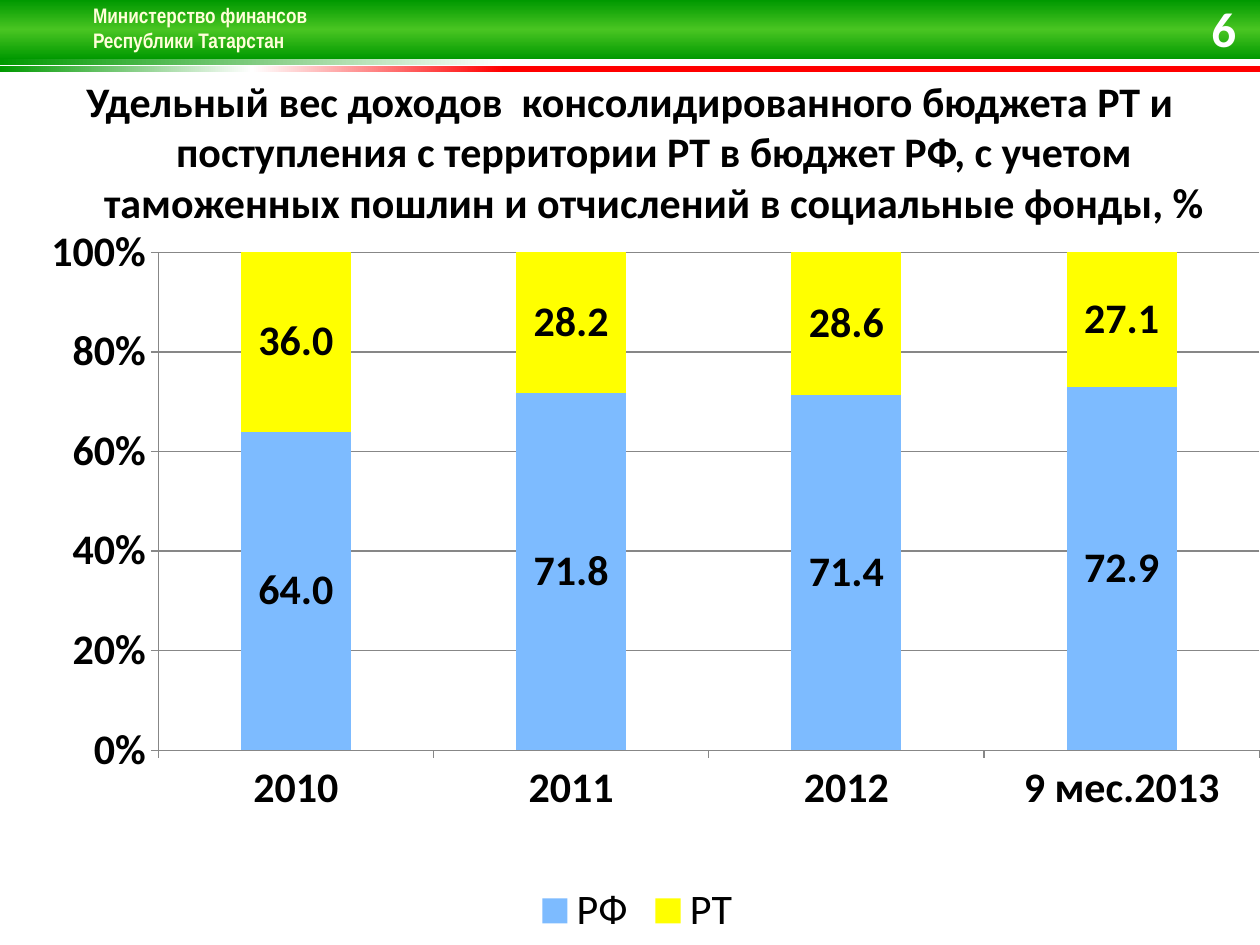
from lxml.etree import SubElement
from pptx import Presentation
from pptx.chart.data import CategoryChartData
from pptx.dml.color import RGBColor
from pptx.enum.chart import XL_CHART_TYPE as ChartType, XL_LEGEND_POSITION as LegendPos
from pptx.enum.chart import XL_TICK_MARK as Tick
from pptx.enum.shapes import MSO_SHAPE as Shape
from pptx.enum.text import MSO_ANCHOR as Anchor, PP_ALIGN as Align
from pptx.oxml import parse_xml
from pptx.oxml.ns import nsdecls, qn
from pptx.util import Inches, Pt

# Content
MINISTRY = "Министерство финансов\vРеспублики Татарстан"
TITLE = ("Удельный вес доходов  консолидированного бюджета РТ и поступления "
         "с территории РТ в бюджет РФ, с учетом таможенных пошлин "
         "и отчислений в социальные фонды, %")
PAGE = "6"
PERIODS = ["2010", "2011", "2012", "9 мес.2013"]
SHARES = {"РФ": [64, 71.8, 71.4, 72.9], "РТ": [36, 28.2, 28.6, 27.1]}

COLORS = {"black": "000000", "white": "FFFFFF", "cream": "FFFFD9", "green": "009900",
          "light": "49C522", "red": "FF0000", "grey": "878787",
          "РФ": "7DBBFF", "РТ": "FFFF00"}

# Header bands: top, height, angle, gradient stops
WIDTH, HEIGHT = 10, 7.5
BAND, STRIPE = 0.47, 0.05
BANDS = [
    (BAND, STRIPE, 180, [(0, "white"), (60, "white"), (100, "green")]),
    (BAND + STRIPE, STRIPE, 180, [(0, "red"), (60, "red"), (80, "white"), (100, "green")]),
    (0, BAND, 90, [(0, "green"), (50, "light"), (100, "green")]),
]
PLOT = {"x": 0.115, "y": 0.039, "w": 0.885, "h": 0.691}
HANGING = Inches(0.38)


def rgb(name):
    return RGBColor.from_string(COLORS[name])


def style(font, size, color="black", bold=True, name="Calibri"):
    for key, value in {"size": Pt(size), "bold": bold, "name": name}.items():
        setattr(font, key, value)
    font.color.rgb = rgb(color)


def add_band(top, height, angle, stops):
    band = slide.shapes.add_shape(Shape.RECTANGLE, 0, Inches(top), Inches(WIDTH), Inches(height))
    band.shadow.inherit = False
    band.line.fill.background()
    stop_xml = "".join(f'<a:gs pos="{pos * 1000}"><a:srgbClr val="{COLORS[color]}"/></a:gs>'
                       for pos, color in stops)
    gradient = parse_xml(f'<a:gradFill {nsdecls("a")} rotWithShape="1"><a:gsLst>{stop_xml}</a:gsLst>'
                         f'<a:lin ang="{angle * 60000}" scaled="0"/></a:gradFill>')
    band._element.spPr.find(qn("a:prstGeom")).addnext(gradient)


def add_text(text, box, align, anchor=Anchor.TOP, hanging=False, **font):
    frame = slide.shapes.add_textbox(*map(Inches, box)).text_frame
    for key, value in {"word_wrap": True, "vertical_anchor": anchor, "text": text}.items():
        setattr(frame, key, value)
    paragraph = frame.paragraphs[0]
    paragraph.alignment = align
    if hanging:
        props = paragraph._p.get_or_add_pPr()
        props.set("marL", str(HANGING))
        props.set("indent", str(-HANGING))
    for run in paragraph.runs:
        style(run.font, **font)
    return paragraph


def add_text_shadow(paragraph):
    for run in paragraph.runs:
        shadow = parse_xml(f'<a:effectLst {nsdecls("a")}><a:outerShdw blurRad="38100" dist="38100" '
                           'dir="2700000"><a:srgbClr val="000000"/></a:outerShdw></a:effectLst>')
        run.font._element.find(qn("a:solidFill")).addnext(shadow)


def add_shares_chart(box):
    data = CategoryChartData(number_format="0.0")
    data.categories = PERIODS
    for budget, values in SHARES.items():
        data.add_series(budget, values)
    chart = slide.shapes.add_chart(ChartType.COLUMN_STACKED_100, *map(Inches, box), data).chart
    style(chart.font, 18, bold=False)
    chart.has_title = False

    # Legend
    chart.has_legend = True
    chart.legend.position = LegendPos.BOTTOM
    chart.legend.include_in_layout = False
    style(chart.legend.font, 24, bold=False)

    # Axes
    for axis in (chart.category_axis, chart.value_axis):
        axis.major_tick_mark = Tick.OUTSIDE
        axis.format.line.color.rgb = rgb("grey")
        style(axis.tick_labels.font, 24)
    shares = chart.value_axis
    for key, value in {"minimum_scale": 0, "maximum_scale": 1, "major_unit": 0.2}.items():
        setattr(shares, key, value)
    shares.major_gridlines.format.line.color.rgb = rgb("grey")
    shares.tick_labels.number_format = "0%"
    shares.tick_labels.number_format_is_linked = False

    # Columns
    columns = chart.plots[0]
    columns.gap_width, columns.overlap = 150, 100
    for series in columns.series:
        series.format.fill.solid()
        series.format.fill.fore_color.rgb = rgb(series.name)
        labels = series.data_labels
        for key, value in {"show_value": True, "number_format": "0.0",
                           "number_format_is_linked": False}.items():
            setattr(labels, key, value)
        style(labels.font, 24)

    # Plot area
    plot_area = chart._chartSpace.chart.plotArea
    for old in plot_area.findall(qn("c:layout")):
        plot_area.remove(old)
    layout = parse_xml(f'<c:layout {nsdecls("c")}><c:manualLayout/></c:layout>')
    parts = {"layoutTarget": "inner", "xMode": "edge", "yMode": "edge", **PLOT}
    for tag, value in parts.items():
        SubElement(layout[0], qn(f"c:{tag}")).set("val", str(value))
    plot_area.insert(0, layout)


deck = Presentation()
deck.slide_width, deck.slide_height = Inches(WIDTH), Inches(HEIGHT)
slide = deck.slides.add_slide(deck.slide_layouts[6])

# Header
for band_row in BANDS:
    add_band(*band_row)
add_text_shadow(add_text(MINISTRY, (0.64, -0.03, 1.92, 0.71), Align.LEFT,
                         size=12, color="cream", name="Arial Narrow"))

# Title, chart and page number
add_text(TITLE, (0, 0.55, WIDTH, 1.39), Align.CENTER, hanging=True, size=24)
add_shares_chart((0.12, 1.78, WIDTH - 0.12, HEIGHT - 1.78))
add_text(PAGE, (9.27, 0.05, 0.64, 0.34), Align.RIGHT, Anchor.MIDDLE,
         hanging=True, size=28, color="white")

deck.save("out.pptx")
